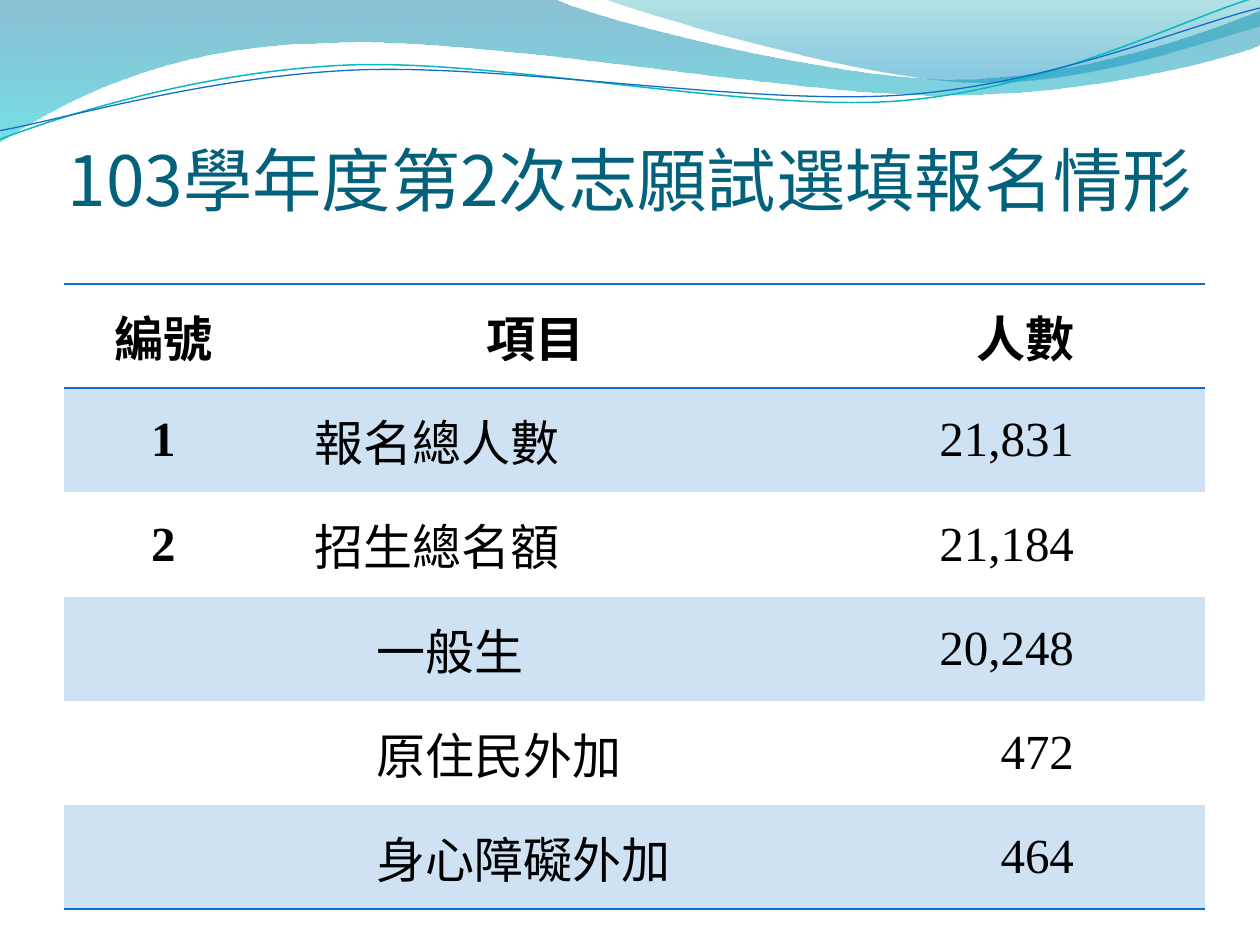
from lxml import etree
from pptx import Presentation
from pptx.dml.color import RGBColor
from pptx.enum.text import MSO_ANCHOR, PP_ALIGN
from pptx.oxml.ns import qn
from pptx.util import Emu, Pt

PX = 914400 / 126
MIDDLE = MSO_ANCHOR.MIDDLE
CENTER, RIGHT, JUSTIFY = PP_ALIGN.CENTER, PP_ALIGN.RIGHT, PP_ALIGN.JUSTIFY
SANS, SERIF = "Noto Sans CJK SC", "Times New Roman"
NO_STYLE = "{2D5ABB26-0587-4C30-8999-92F81FD0307C}"

COLORS = {
    "title": "04617B",
    "text": "000000",
    "accent": "0F6FC6",
    "aqua": "0AB8BF",
    "deep": "0074A1",
    "cyan": "00C6CF",
    "teal": "00A1A9",
    "blue": "008BBF",
}

BANDS = [
    ([(0, 0), (554, -1),
      (600, 21, 837, 79, 955, 79), (1074, 79, 1207, 33, 1260, 11),
      (1261, 45),
      (1239, 55, 1096, 96, 940, 95), (784, 95, 481, 35, 324, 43),
      (163, 45, 58, 105, -1, 142)],
     [("deep", 0, 45), ("cyan", 1, 55)]),
    ([(604, -1),
      (641, 14, 859, 78, 969, 82), (1079, 87, 1211, 40, 1260, 26),
      (1260, 0)],
     [("teal", 0, 30), ("blue", 0.8, 45)]),
]

STRANDS = [
    ([(-2, 140), (58, 117, 199, 71, 349, 65), (498, 59, 747, 112, 898, 101),
      (1050, 89, 1182, 19, 1257, -3)], "aqua", 0.85),
    ([(-2, 131), (57, 121, 207, 76, 357, 70), (508, 64, 752, 106, 903, 95),
      (1053, 84, 1186, 26, 1260, 8)], "accent", 0.75),
]

HEADER = ["編號", "項目", "人數"]
ROWS = [
    ("1", "報名總人數", "21,831"),
    ("2", "招生總名額", "21,184"),
    ("", "一般生", "20,248"),
    ("", "原住民外加", "472"),
    ("", "身心障礙外加", "464"),
]
COL_WIDTHS = [198, 546, 268, 129]
ROW_HEIGHTS = [104, 104, 105, 104, 104, 104]


def px(n):
    return Emu(round(n * PX))


def rgb(name):
    return RGBColor.from_string(COLORS[name])


def set_alpha(parent, percent):
    clr = next(parent.iter(qn("a:srgbClr")))
    etree.SubElement(clr, qn("a:alpha"), val=str(percent * 1000))


def set_font(p, name, size, color, bold=False):
    f = p.font
    f.name, f.size, f.bold = name, Pt(size), bold
    f.color.rgb = rgb(color)
    r_pr = p._p.pPr.find(qn("a:defRPr"))
    etree.SubElement(r_pr, qn("a:ea"), typeface=SANS)


def bend_segments(sp, path):
    lines = iter(list(sp._element.iter(qn("a:lnTo"))))
    for segment in path[1:]:
        group = [next(lines) for _ in range(len(segment) // 2)]
        if len(group) == 3:
            curve = etree.Element(qn("a:cubicBezTo"))
            group[0].addprevious(curve)
            for line in group:
                curve.append(line[0])
                line.getparent().remove(line)


def add_outline(s, path, close):
    points = [(px(seg[i]), px(seg[i + 1]))
              for seg in path for i in range(0, len(seg), 2)]
    builder = s.shapes.build_freeform(*points[0])
    builder.add_line_segments(points[1:], close=close)
    sp = builder.convert_to_shape()
    bend_segments(sp, path)
    sp.shadow.inherit = False
    return sp


def add_band(s, path, stops):
    sp = add_outline(s, path, True)
    sp.line.fill.background()
    sp.fill.gradient()
    sp.fill.gradient_angle = 270
    for stop, (color, position, alpha) in zip(sp.fill.gradient_stops, stops):
        stop.color.rgb = rgb(color)
        stop.position = position
        set_alpha(stop._gs, alpha)


def add_strand(s, path, color, width):
    sp = add_outline(s, path, False)
    sp.fill.background()
    sp.line.color.rgb = rgb(color)
    sp.line.width = Pt(width)


def set_title(s, text):
    sp = s.shapes.title
    s.shapes._spTree.append(sp._element)
    sp.left, sp.top, sp.width, sp.height = px(63), px(97), px(1134), px(158)
    tf = sp.text_frame
    tf.word_wrap = True
    tf.vertical_anchor = MIDDLE
    tf.margin_left = tf.margin_right = tf.margin_bottom = 0
    tf.margin_top = px(6)
    p = tf.paragraphs[0]
    p.text = text
    p.alignment = CENTER
    set_font(p, SANS, 39.6, "title")


def add_border(cell, tag):
    ln = etree.Element(qn(tag), w=str(Pt(1)))
    fill = etree.SubElement(ln, qn("a:solidFill"))
    etree.SubElement(fill, qn("a:srgbClr"), val=COLORS["accent"])
    cell._tc.get_or_add_tcPr().insert(0, ln)


def fill_cell(cell, text, align, font, bold):
    cell.vertical_anchor = MIDDLE
    cell.margin_left, cell.margin_right = px(3), px(2)
    cell.margin_top = cell.margin_bottom = 0
    p = cell.text_frame.paragraphs[0]
    p.text = text
    p.alignment = align
    set_font(p, font, 28, "text", bold)
    return p


def indent(p, left, first):
    p_pr = p._p.get_or_add_pPr()
    p_pr.set("marL", str(px(left)))
    p_pr.set("indent", str(px(first)))


def add_table(s):
    count = len(ROW_HEIGHTS)
    frame = s.shapes.add_table(count, len(COL_WIDTHS), px(64), px(284),
                               px(sum(COL_WIDTHS)), px(sum(ROW_HEIGHTS)))
    table = frame.table
    table.first_row = table.horz_banding = False
    table._tbl.tblPr.find(qn("a:tableStyleId")).text = NO_STYLE
    for col, width in zip(table.columns, COL_WIDTHS):
        col.width = px(width)
    for i, (row, height) in enumerate(zip(table.rows, ROW_HEIGHTS)):
        row.height = px(height)
        for cell in row.cells:
            if i % 2:
                cell.fill.solid()
                cell.fill.fore_color.rgb = rgb("accent")
                set_alpha(cell._tc.tcPr, 20)
            else:
                cell.fill.background()
            if i in (0, count - 1):
                add_border(cell, "a:lnB")
            if i == 0:
                add_border(cell, "a:lnT")
    for j, (text, align) in enumerate(zip(HEADER, (CENTER, CENTER, RIGHT))):
        fill_cell(table.cell(0, j), text, align, SANS, True)
    for i, (number, item, people) in enumerate(ROWS, 1):
        if number:
            fill_cell(table.cell(i, 0), number, CENTER, SERIF, True)
        p = fill_cell(table.cell(i, 1), item, JUSTIFY, SERIF, False)
        indent(p, *((50, 0) if number else (0, 112)))
        fill_cell(table.cell(i, 2), people, RIGHT, SERIF, False)


def main():
    prs = Presentation()
    prs.slide_width, prs.slide_height = px(1260), px(945)
    s = prs.slides.add_slide(prs.slide_layouts[5])
    for path, stops in BANDS:
        add_band(s, path, stops)
    for path, color, width in STRANDS:
        add_strand(s, path, color, width)
    set_title(s, "103學年度第2次志願試選填報名情形")
    add_table(s)
    prs.save("out.pptx")


if __name__ == "__main__":
    main()
